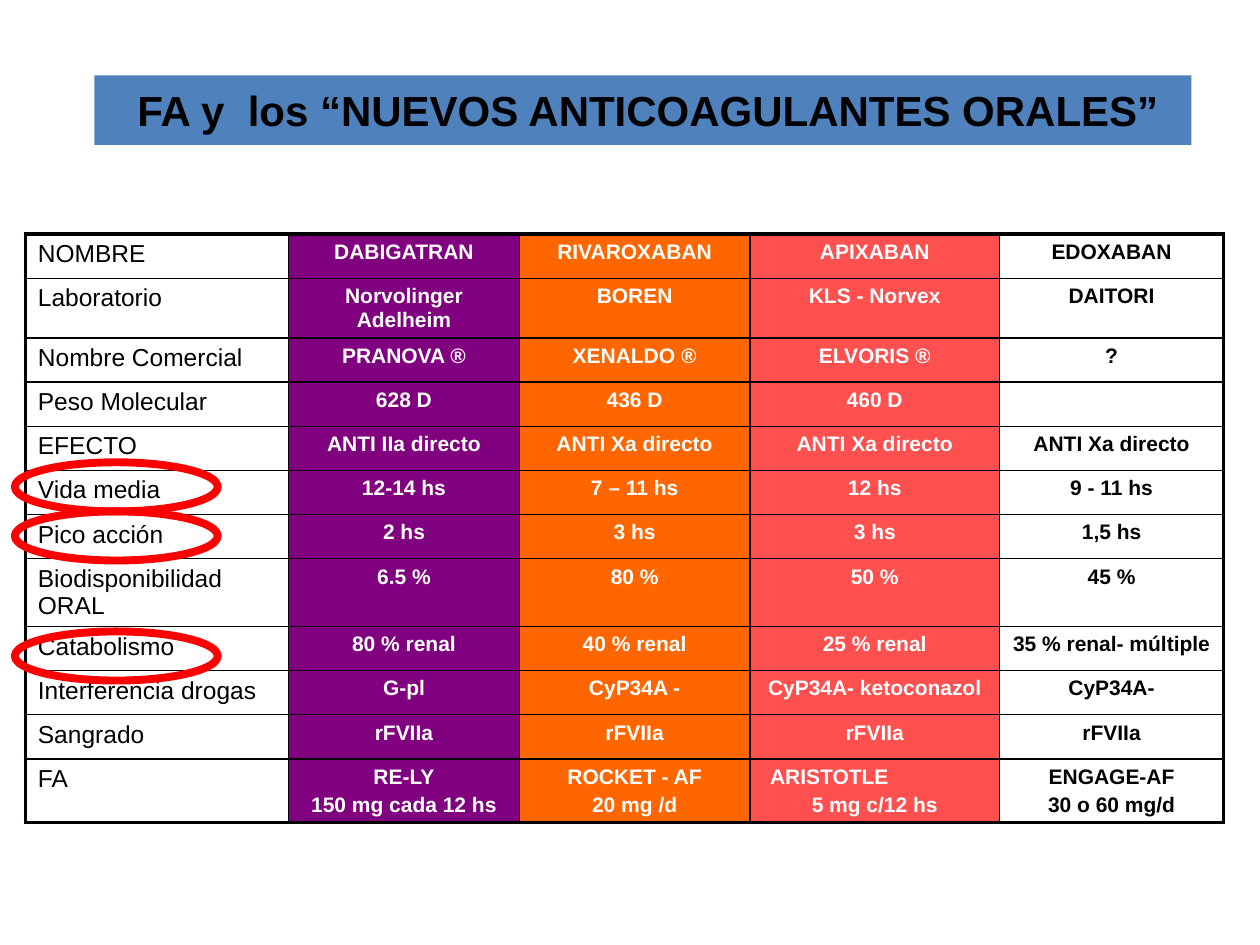
from dataclasses import dataclass

from lxml import etree
from pptx import Presentation
from pptx.dml.color import RGBColor
from pptx.enum.shapes import MSO_SHAPE
from pptx.enum.text import MSO_ANCHOR, PP_ALIGN
from pptx.oxml.ns import qn
from pptx.util import Cm, Pt

LEFT, CENTER = PP_ALIGN.LEFT, PP_ALIGN.CENTER
MIDDLE = MSO_ANCHOR.MIDDLE
OVAL = MSO_SHAPE.OVAL


@dataclass(frozen=True)
class Theme:
    font: str = "Arial"
    black: str = "000000"
    white: str = "FFFFFF"
    banner: str = "4F81BD"
    mark: str = "FF0000"
    drugs: tuple = ("800080", "FF6600", "FF5050", "FFFFFF")
    title_size: float = 24
    label_size: float = 14
    value_size: float = 12
    mark_width: float = 4.5
    inner_border: float = 1
    outer_border: float = 2.25


THEME = Theme()
TITLE = "FA y  los “NUEVOS ANTICOAGULANTES ORALES”"
COLUMN_WIDTHS = (5.31, 4.65, 4.65, 5.03, 4.52)
ROW_HEIGHT = 0.89
ROWS = (
    ("NOMBRE", "DABIGATRAN", "RIVAROXABAN", "APIXABAN", "EDOXABAN"),
    ("Laboratorio", "Norvolinger Adelheim", "BOREN", "KLS - Norvex", "DAITORI"),
    ("Nombre Comercial", "PRANOVA ®", "XENALDO ®", "ELVORIS ®", "?"),
    ("Peso Molecular", "628 D", "436 D", "460 D", ""),
    ("EFECTO", "ANTI IIa directo", "ANTI Xa directo", "ANTI Xa directo", "ANTI Xa directo"),
    ("Vida media", "12-14 hs", "7 – 11 hs", "12 hs", "9 - 11 hs"),
    ("Pico acción", "2 hs", "3 hs", "3 hs", "1,5 hs"),
    ("Biodisponibilidad ORAL", "6.5 %", "80 %", "50 %", "45 %"),
    ("Catabolismo", "80 % renal", "40 % renal", "25 % renal", "35 % renal- múltiple"),
    ("Interferencia drogas", "G-pl", "CyP34A -", "CyP34A- ketoconazol", "CyP34A-"),
    ("Sangrado", "rFVIIa", "rFVIIa", "rFVIIa", "rFVIIa"),
    ("FA", "RE-LY\n150 mg cada 12 hs", "ROCKET - AF\n20 mg /d",
     "ARISTOTLE\n5 mg c/12 hs", "ENGAGE-AF\n30 o 60 mg/d"),
)
INDENTED = "ARISTOTLE"
MARK_SIZE = (4.09, 0.99)
MARK_TOPS = (10.31, 9.32, 12.73)


def write(frame, text, *, size, color, bold=False, align=LEFT, before=0):
    for number, line in enumerate(text.split("\n")):
        para = frame.add_paragraph() if number else frame.paragraphs[0]
        para.alignment = align
        para.space_before = Pt(before)
        if not line:
            etree.SubElement(para._p, qn("a:endParaRPr"), sz=str(int(size * 100)))
            continue
        span = para.add_run()
        span.text = line
        span.font.name = THEME.font
        span.font.size = Pt(size)
        span.font.bold = bold
        span.font.color.rgb = RGBColor.from_string(color)


def draw_borders(cell, widths):
    """Draw the left, right, top and bottom borders, in that order."""
    properties = cell._tc.get_or_add_tcPr()
    for side, width in zip("LRTB", widths):
        line = etree.SubElement(properties, qn(f"a:ln{side}"), w=str(Pt(width)))
        fill = etree.SubElement(line, qn("a:solidFill"))
        etree.SubElement(fill, qn("a:srgbClr"), val=THEME.black)


def place_title(page, left, top, width, height):
    title = page.shapes.title
    title.left, title.top, title.width, title.height = map(Cm, (left, top, width, height))
    title.fill.solid()
    title.fill.fore_color.rgb = RGBColor.from_string(THEME.banner)
    frame = title.text_frame
    frame.word_wrap = True
    frame.vertical_anchor = MIDDLE
    frame.margin_left = Cm(0.46)
    write(frame, TITLE, size=THEME.title_size, color=THEME.black, bold=True, align=CENTER)


def fill_cell(cell, text, column):
    if column == 0:
        cell.fill.background()
        write(cell.text_frame, text, size=THEME.label_size, color=THEME.black,
              before=THEME.label_size * 0.2)
        return
    background = THEME.drugs[column - 1]
    cell.fill.solid()
    cell.fill.fore_color.rgb = RGBColor.from_string(background)
    color = THEME.black if background == THEME.white else THEME.white
    write(cell.text_frame, text, size=THEME.value_size, color=color, bold=True,
          align=CENTER, before=THEME.value_size * 0.2)
    if text.startswith(INDENTED):
        first = cell.text_frame.paragraphs[0]
        first.alignment = LEFT
        first._p.get_or_add_pPr().set("marL", str(Cm(0.15)))


def place_table(page, left, top):
    last_row, last_column = len(ROWS) - 1, len(COLUMN_WIDTHS) - 1
    table = page.shapes.add_table(
        len(ROWS), len(COLUMN_WIDTHS), Cm(left), Cm(top),
        Cm(sum(COLUMN_WIDTHS)), Cm(ROW_HEIGHT * len(ROWS))).table
    table.first_row = table.horz_banding = False
    for column, width in zip(table.columns, COLUMN_WIDTHS):
        column.width = Cm(width)
    for r, texts in enumerate(ROWS):
        table.rows[r].height = Cm(ROW_HEIGHT)
        for c, text in enumerate(texts):
            cell = table.cell(r, c)
            outer_sides = (c == 0, c == last_column, r == 0, r == last_row)
            draw_borders(cell, [THEME.outer_border if outer else THEME.inner_border
                                for outer in outer_sides])
            fill_cell(cell, text, c)


def place_marks(page, left):
    """Ring the row labels that matter most."""
    for top in MARK_TOPS:
        ring = page.shapes.add_shape(OVAL, Cm(left), Cm(top), *map(Cm, MARK_SIZE))
        ring.shadow.inherit = False
        ring.fill.background()
        ring.line.color.rgb = RGBColor.from_string(THEME.mark)
        ring.line.width = Pt(THEME.mark_width)


def main():
    deck = Presentation()
    deck.slide_width, deck.slide_height = Cm(25.4), Cm(19.05)
    page = deck.slides.add_slide(deck.slide_layouts.get_by_name("Title Only"))
    place_title(page, 1.9, 1.52, 22.12, 1.4)
    place_table(page, 0.51, 4.72)
    place_marks(page, 0.3)
    deck.save("out.pptx")


if __name__ == "__main__":
    main()
